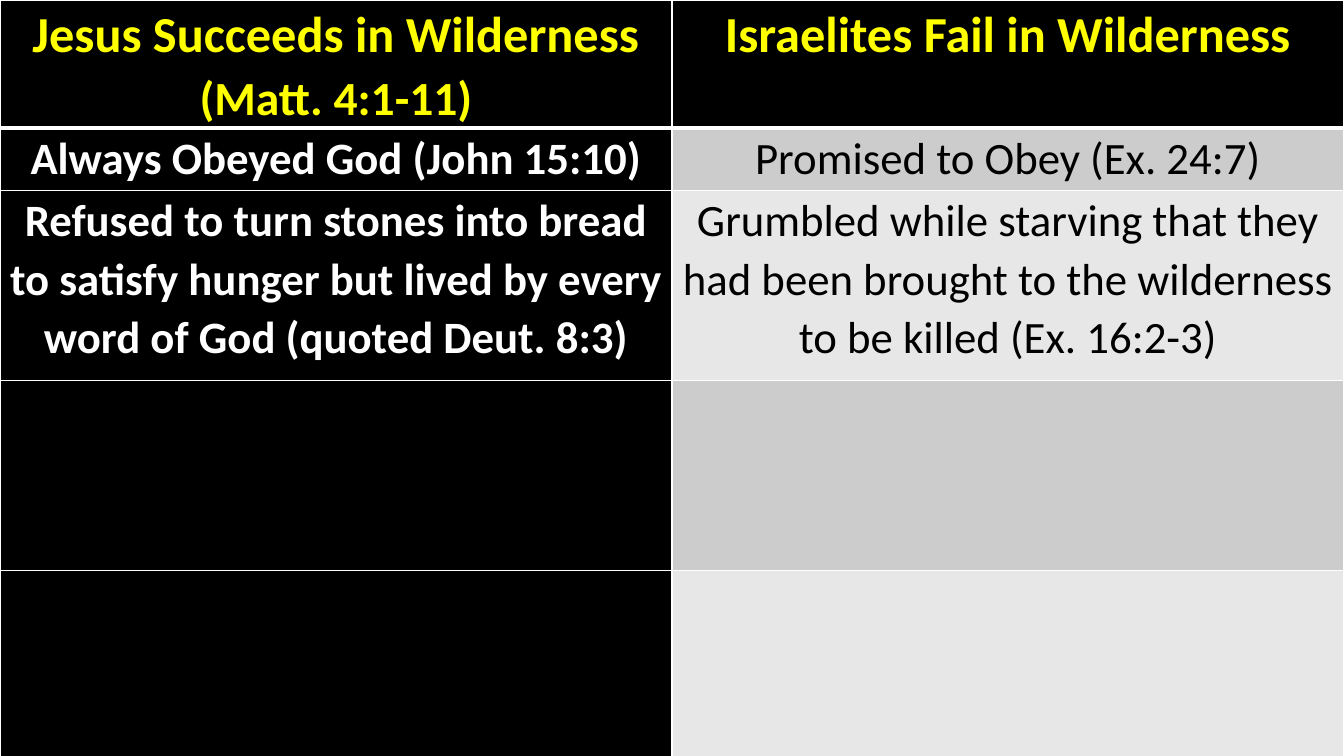
from lxml import etree
from pptx import Presentation
from pptx.dml.color import RGBColor
from pptx.enum import text
from pptx.oxml import ns
from pptx.util import Cm, Pt

BLACK = RGBColor(0x00, 0x00, 0x00)
WHITE = RGBColor(0xFF, 0xFF, 0xFF)
YELLOW = RGBColor(0xFF, 0xFF, 0x00)
DARK_BAND = RGBColor(0xCC, 0xCC, 0xCC)
LIGHT_BAND = RGBColor(0xE7, 0xE7, 0xE7)

SLIDE_WIDTH, SLIDE_HEIGHT = Cm(33.87), Cm(19.05)
TABLE_HEIGHT = Cm(19.1)
ROW_HEIGHTS = [Cm(2.34), Cm(1.57)] + [Cm(4.79)] * 3
CELL_MARGINS = {
    "margin_left": Cm(0.19),
    "margin_right": Cm(0.19),
    "margin_top": 0,
    "margin_bottom": 0,
}

HEADER_FORMAT = {"bold": True, "color": YELLOW}
JESUS_FORMAT = {"bold": True, "color": WHITE}
ISRAEL_FORMAT = {"bold": False, "color": BLACK}

# Each cell is a list of (wording, size in points) runs.
HEADERS = [
    [("Jesus Succeeds in Wilderness ", 36), ("(Matt. 4:1-11)", 34)],
    [("Israelites Fail in Wilderness", 36)],
]
COMPARISONS = [
    ["Always Obeyed God (John 15:10)", "Promised to Obey (Ex. 24:7)"],
    [
        "Refused to turn stones into bread to satisfy hunger but lived by "
        "every word of God (quoted Deut. 8:3)",
        "Grumbled while starving that they had been brought to the "
        "wilderness to be killed (Ex. 16:2-3)",
    ],
    ["", ""],
    ["", ""],
]


def set_borders(cell, widths):
    """Draw white cell borders; widths maps each side (L, R, T, B) to points."""
    properties = cell._tc.get_or_add_tcPr()
    for side, width in widths.items():
        line = etree.SubElement(properties, ns.qn(f"a:ln{side}"), w=str(Pt(width)))
        fill = etree.SubElement(line, ns.qn("a:solidFill"))
        etree.SubElement(fill, ns.qn("a:srgbClr"), val=str(WHITE))


def write_runs(cell, runs, font_format):
    paragraph = cell.text_frame.paragraphs[0]
    paragraph.alignment = text.PP_ALIGN.CENTER
    paragraph.line_spacing = 1.07
    for wording, size in runs:
        run = paragraph.add_run()
        run.text = wording
        run.font.name = "Calibri"
        run.font.size = Pt(size)
        run.font.bold = font_format["bold"]
        run.font.color.rgb = font_format["color"]


def format_cell(cell, fill_color, borders):
    for name, value in CELL_MARGINS.items():
        setattr(cell, name, value)
    set_borders(cell, borders)
    cell.fill.solid()
    cell.fill.fore_color.rgb = fill_color


def add_comparison_table(slide):
    rows = [HEADERS] + [
        [[(wording, 32)] if wording else [] for wording in row] for row in COMPARISONS
    ]
    frame = slide.shapes.add_table(len(rows), 2, 0, 0, SLIDE_WIDTH, TABLE_HEIGHT)
    table = frame.table
    for row, height in zip(table.rows, ROW_HEIGHTS):
        row.height = height
    frame.height = TABLE_HEIGHT

    for row_index, row in enumerate(rows):
        is_header = row_index == 0
        band = DARK_BAND if row_index % 2 else LIGHT_BAND
        borders = {
            "L": 1,
            "R": 1,
            "T": 3 if row_index == 1 else 1,
            "B": 3 if is_header else 1,
        }
        fills = [BLACK, BLACK if is_header else band]
        formats = [HEADER_FORMAT] * 2 if is_header else [JESUS_FORMAT, ISRAEL_FORMAT]
        for column, runs in enumerate(row):
            cell = table.cell(row_index, column)
            format_cell(cell, fills[column], borders)
            if runs:
                write_runs(cell, runs, formats[column])


def main():
    presentation = Presentation()
    presentation.slide_width = SLIDE_WIDTH
    presentation.slide_height = SLIDE_HEIGHT
    slide = presentation.slides.add_slide(presentation.slide_layouts[6])
    slide.background.fill.solid()
    slide.background.fill.fore_color.rgb = BLACK
    add_comparison_table(slide)
    presentation.save("out.pptx")


if __name__ == "__main__":
    main()
